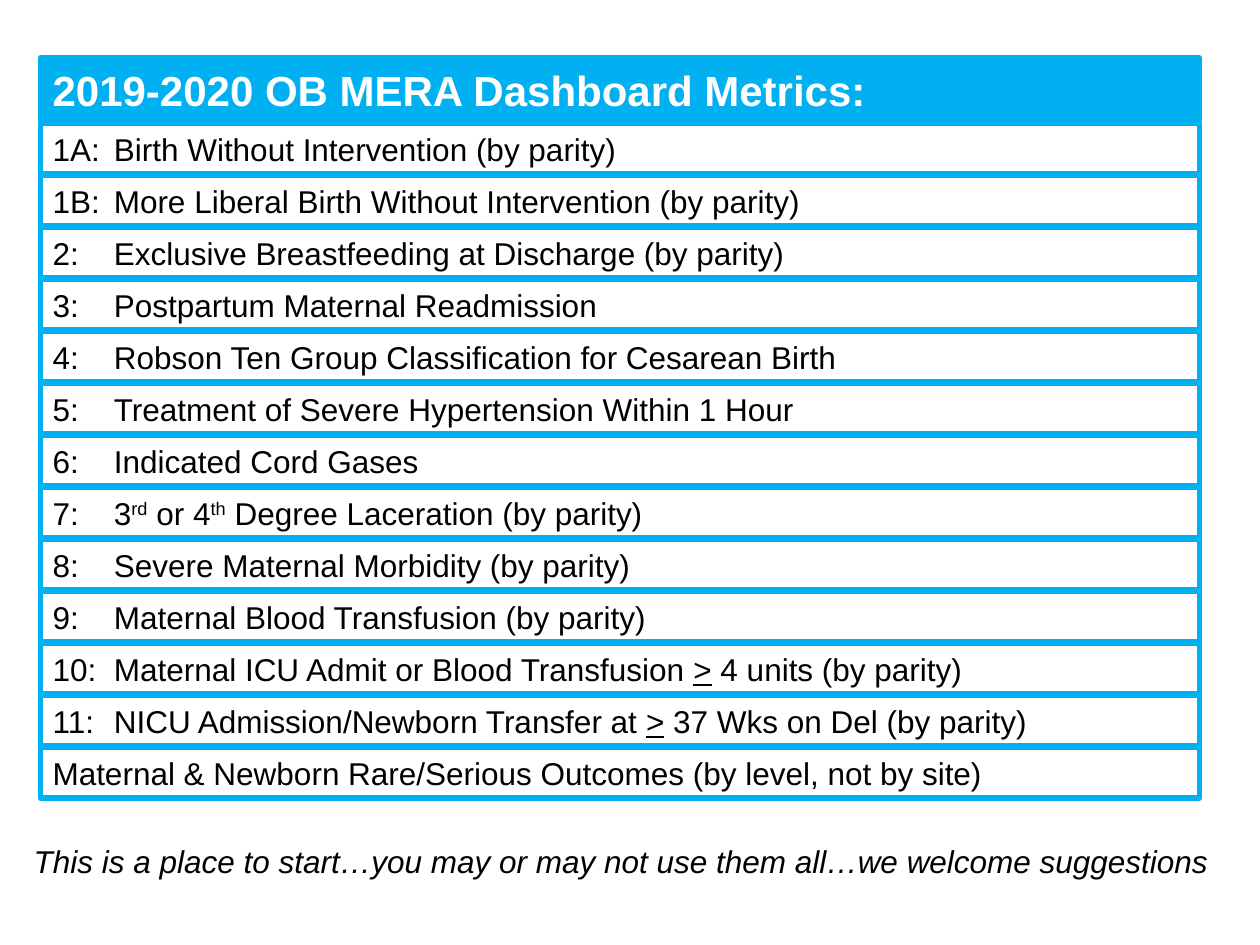
"""Build the obstetric dashboard metrics slide."""
from lxml import etree
from pptx import Presentation
from pptx.dml.color import RGBColor
from pptx.enum import shapes, text
from pptx.oxml.ns import qn
from pptx.util import Pt

TITLE = "2019-2020 OB MERA Dashboard Metrics:"
METRICS = [
    ("1A:", ["Birth Without Intervention (by parity)"]),
    ("1B:", ["More Liberal Birth Without Intervention (by parity)"]),
    ("2:", ["Exclusive Breastfeeding at Discharge (by parity)"]),
    ("3:", ["Postpartum Maternal Readmission"]),
    ("4:", ["Robson Ten Group Classification for Cesarean Birth"]),
    ("5:", ["Treatment of Severe Hypertension Within 1 Hour"]),
    ("6:", ["Indicated Cord Gases"]),
    ("7:", ["3", ("rd", "super"), " or 4", ("th", "super"),
            " Degree Laceration (by parity)"]),
    ("8:", ["Severe Maternal Morbidity (by parity)"]),
    ("9:", ["Maternal Blood Transfusion (by parity)"]),
    ("10:", ["Maternal ICU Admit or Blood Transfusion ", (">", "under"),
             " 4 units (by parity)"]),
    ("11:", ["NICU Admission/Newborn Transfer at ", (">", "under"),
             " 37 Wks on Del (by parity)"]),
    ("", ["Maternal & Newborn Rare/Serious Outcomes (by level, not by site)"]),
]
FOOTER = "This is a place to start…you may or may not use them all…we welcome suggestions"

THEME = {
    "accent": RGBColor(0x00, 0xB0, 0xF0),
    "title": {"name": "Arial", "size": Pt(24), "bold": True,
              "color": RGBColor(0xFF, 0xFF, 0xFF)},
    "body": {"name": "Arial", "size": Pt(18), "color": RGBColor(0, 0, 0)},
}
THEME["footer"] = {**THEME["body"], "italic": True}

LEFT, WIDTH = 23, 662.4
TITLE_TOP, TITLE_H = 33.1, 36
ROWS_TOP, ROW_H, PITCH = 70.4, 29.08, 29.72
LABEL_W = 35


def write(sp, runs, style):
    tf = sp.text_frame
    tf.word_wrap = True
    tf.vertical_anchor = text.MSO_ANCHOR.MIDDLE
    p = tf.paragraphs[0]
    p.alignment = text.PP_ALIGN.LEFT
    for run in runs:
        words, effect = (run, None) if isinstance(run, str) else run
        r = p.add_run()
        r.text = words
        for key, value in style.items():
            if key == "color":
                r.font.color.rgb = value
            else:
                setattr(r.font, key, value)
        if effect == "under":
            r.font.underline = True
        elif effect == "super":
            r._r.get_or_add_rPr().set("baseline", "30000")
    return p


def add_bar(slide, top, height, filled=False):
    sp = slide.shapes.add_shape(shapes.MSO_SHAPE.RECTANGLE,
                                Pt(LEFT), Pt(top), Pt(WIDTH), Pt(height))
    sp.shadow.inherit = False
    sp.line.color.rgb = THEME["accent"]
    sp.line.width = Pt(3)
    if filled:
        sp.fill.solid()
        sp.fill.fore_color.rgb = THEME["accent"]
    else:
        sp.fill.background()
    return sp


def add_tab(p, position):
    tabs = etree.SubElement(p._p.get_or_add_pPr(), qn("a:tabLst"))
    etree.SubElement(tabs, qn("a:tab"), pos=str(Pt(position)), algn="l")


def main():
    prs = Presentation()
    prs.slide_width, prs.slide_height = Pt(720), Pt(540)
    slide = prs.slides.add_slide(prs.slide_layouts[6])
    for i, (label, runs) in enumerate(METRICS):
        sp = add_bar(slide, ROWS_TOP + i * PITCH, ROW_H)
        if label:
            add_tab(write(sp, [label + "\t", *runs], THEME["body"]), LABEL_W)
        else:
            write(sp, runs, THEME["body"])
    write(add_bar(slide, TITLE_TOP, TITLE_H, filled=True), [TITLE], THEME["title"])
    footer = slide.shapes.add_textbox(Pt(12.2), Pt(477.4), Pt(697), Pt(ROW_H))
    write(footer, [FOOTER], THEME["footer"])
    prs.save("out.pptx")


if __name__ == "__main__":
    main()
